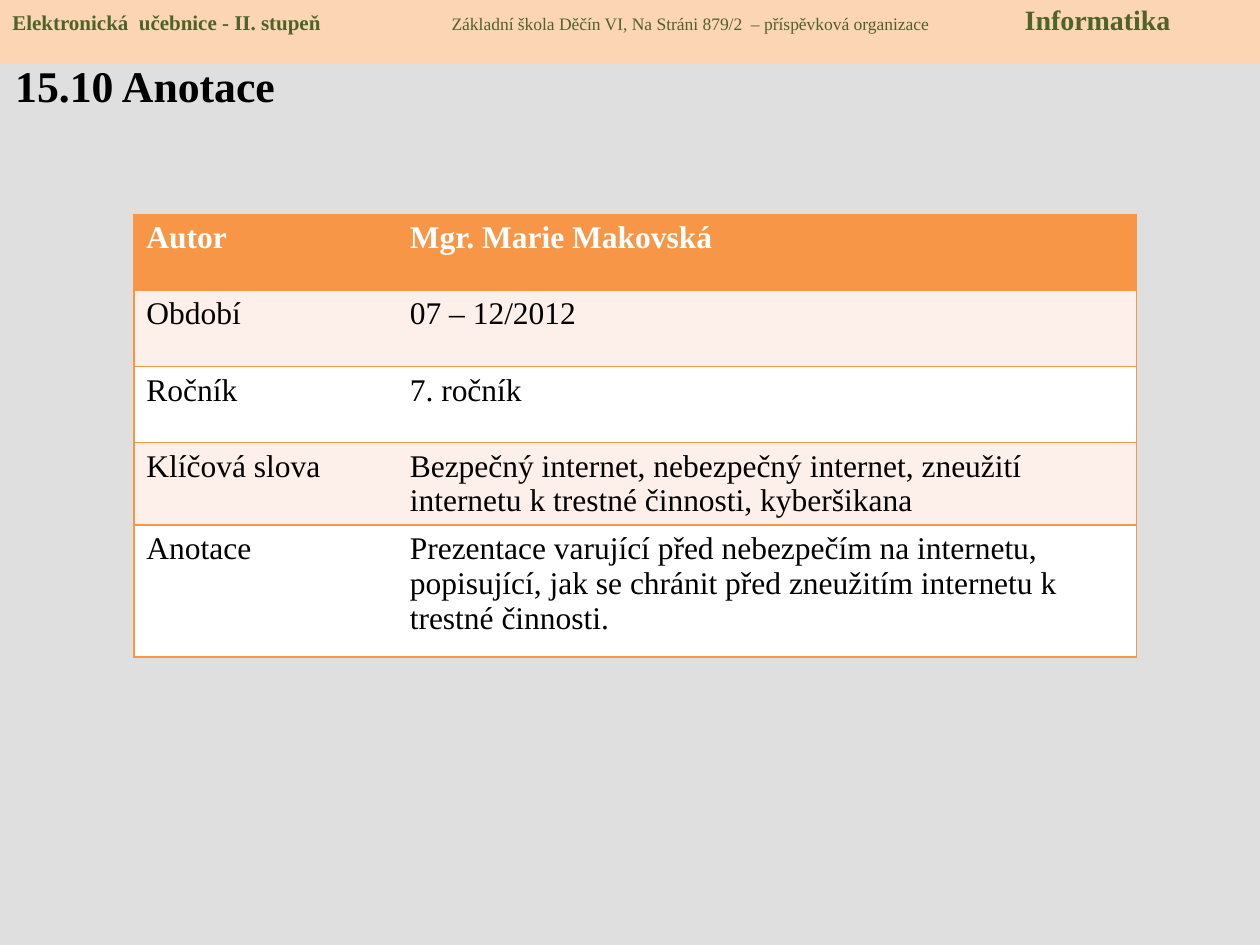
"""Build the annotation slide of an electronic textbook."""
import pptx
import pptx.util
import pptx.dml.color
import pptx.enum.shapes
import pptx.enum.text
import pptx.oxml
import pptx.oxml.ns

Pt = pptx.util.Pt
RGB = pptx.dml.color.RGBColor
GREY = RGB(0xDF, 0xDF, 0xDF)
PEACH = RGB(0xFC, 0xD5, 0xB5)
GREEN = RGB(0x4F, 0x62, 0x28)
ORANGE = RGB(0xF7, 0x96, 0x46)
PINK = RGB(0xFD, 0xEF, 0xE9)
WHITE = RGB(0xFF, 0xFF, 0xFF)
BLACK = RGB(0, 0, 0)
FACE = "Times New Roman"
TOP = pptx.enum.text.MSO_ANCHOR.TOP
LEFT = pptx.enum.text.PP_ALIGN.LEFT
SPACE = pptx.oxml.ns.nsdecls("a")


def add_text(par, text, size, color, bold):
    run = par.add_run()
    run.text = text
    form = {"name": FACE, "size": Pt(size), "bold": bold}
    for key, value in form.items():
        setattr(run.font, key, value)
    run.font.color.rgb = color
    par.alignment = LEFT


def add_edges(cell, first):
    paint = f'<a:solidFill><a:srgbClr val="{ORANGE}"/></a:solidFill>'
    inner = "R" if first else "L"
    for spot, side in enumerate("LRTB"):
        fill = "<a:noFill/>" if side == inner else paint
        line = f'<a:ln{side} {SPACE} w="{Pt(1)}">{fill}</a:ln{side}>'
        props = cell._tc.get_or_add_tcPr()
        props.insert(spot, pptx.oxml.parse_xml(line))


deck = pptx.Presentation()
deck.slide_width = Pt(720)
deck.slide_height = Pt(540)
slide = deck.slides.add_slide(deck.slide_layouts[5])
slide.background.fill.solid()
slide.background.fill.fore_color.rgb = GREY

title = slide.shapes.title
place = {"left": 1.5, "top": 30.25, "width": 230, "height": 46.5}
for key, value in place.items():
    setattr(title, key, Pt(value))
title.text_frame.vertical_anchor = TOP
add_text(title.text_frame.paragraphs[0], "15.10 Anotace", 25, BLACK, True)

rows = [
    ("Autor", "Mgr. Marie Makovská"),
    ("Období", "07 – 12/2012"),
    ("Ročník", "7. ročník"),
    ("Klíčová slova", "Bezpečný internet, nebezpečný internet, zneužití "
     "internetu k trestné činnosti, kyberšikana"),
    ("Anotace", "Prezentace varující před nebezpečím na internetu, "
     "popisující, jak se chránit před zneužitím internetu k "
     "trestné činnosti."),
]
widths = [150.5, 422.5]
heights = [43.5, 43.5, 43.5, 43.5, 75.5]
frame = slide.shapes.add_table(len(rows), len(widths), Pt(76.5), Pt(122.5),
                               Pt(sum(widths)), Pt(sum(heights)))
table = frame.table
table.horz_banding = False
for col, width in zip(table.columns, widths):
    col.width = Pt(width)
for r, texts in enumerate(rows):
    table.rows[r].height = Pt(heights[r])
    head = r == 0
    shade = ORANGE if head else PINK if r % 2 else WHITE
    for c, text in enumerate(texts):
        cell = table.cell(r, c)
        cell.fill.solid()
        cell.fill.fore_color.rgb = shade
        add_edges(cell, c == 0)
        add_text(cell.text_frame.paragraphs[0], text, 18,
                 WHITE if head else BLACK, head)

banner = slide.shapes.add_shape(pptx.enum.shapes.MSO_SHAPE.RECTANGLE,
                                Pt(0), Pt(-2), Pt(720), Pt(38.5))
banner.shadow.inherit = False
banner.fill.solid()
banner.fill.fore_color.rgb = PEACH
banner.line.fill.background()
banner.text_frame.word_wrap = True
banner.text_frame.vertical_anchor = TOP
par = banner.text_frame.paragraphs[0]
parts = [
    ("Elektronická  učebnice - II. stupeň\t", 12, True),
    ("Základní škola Děčín VI, Na Stráni 879/2  – příspěvková organizace\t",
     10, False),
    ("Informatika", 16, True),
]
for text, size, bold in parts:
    add_text(par, text, size, GREEN, bold)
stops = "".join(f'<a:tab pos="{Pt(x)}" algn="l"/>' for x in (251, 578.5))
tabs = pptx.oxml.parse_xml(f"<a:tabLst {SPACE}>{stops}</a:tabLst>")
par._p.get_or_add_pPr().append(tabs)

deck.save("out.pptx")
